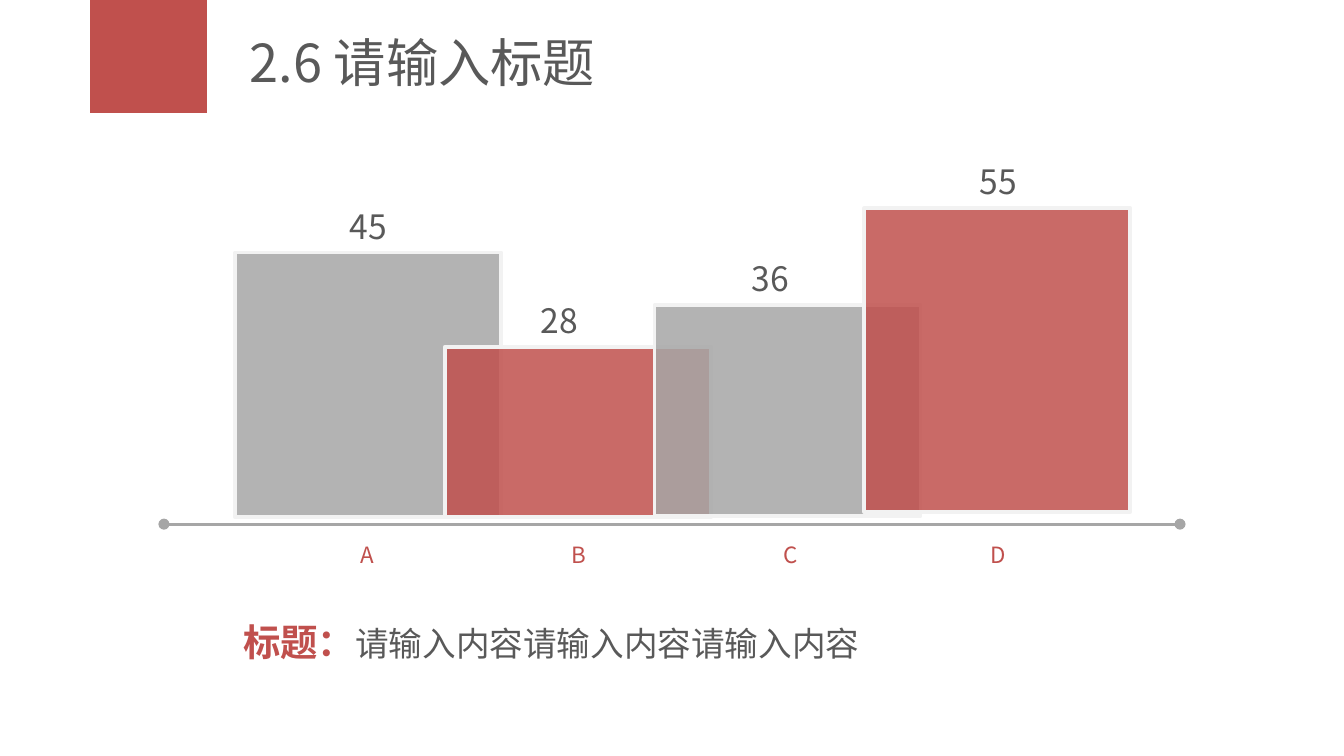
"""Build a slide with four overlapping bars on a baseline."""
from lxml.etree import SubElement
from pptx import Presentation
from pptx.dml.color import RGBColor
from pptx.enum.shapes import MSO_CONNECTOR, MSO_SHAPE
from pptx.enum.text import MSO_ANCHOR, PP_ALIGN
from pptx.oxml.ns import qn
from pptx.util import Inches, Pt

FONT = "Noto Sans CJK SC"
HUES = {"red": "C0504D", "gray": "A6A6A6", "edge": "F2F2F2", "text": "595959"}

deck = Presentation()
deck.slide_width, deck.slide_height = Inches(10), Inches(10 * 9 / 16)
slide = deck.slides.add_slide(deck.slide_layouts[6])


def add_text(box, runs, align=PP_ALIGN.LEFT, space=1.0, wrap=True):
    frame = slide.shapes.add_textbox(*map(Inches, box)).text_frame
    frame.word_wrap = wrap
    line = frame.paragraphs[0]
    line.alignment, line.line_spacing = align, space
    for words, size, hue, bold in runs:
        run = line.add_run()
        run.text = words
        run.font.size, run.font.bold = Pt(size), bold
        run.font.name = FONT
        run.font.color.rgb = RGBColor.from_string(HUES[hue])
        SubElement(run.font._element, qn("a:ea")).set("typeface", FONT)
    return frame


def add_block(box, hue):
    block = slide.shapes.add_shape(MSO_SHAPE.RECTANGLE, *map(Inches, box))
    block.shadow.inherit = False
    block.fill.solid()
    block.fill.fore_color.rgb = RGBColor.from_string(HUES[hue])
    block.line.fill.background()
    return block


add_block((0.67, 0, 0.87, 0.84), "red")
title = add_text((1.76, 0.14, 7.89, 0.63), [("2.6 请输入标题", 28, "text", False)])
title.vertical_anchor = MSO_ANCHOR.MIDDLE

axis = slide.shapes.add_connector(
    MSO_CONNECTOR.STRAIGHT, Inches(1.22), Inches(3.9), Inches(8.78), Inches(3.9))
axis.line.color.rgb = RGBColor.from_string(HUES["gray"])
axis.line.width = Pt(1.5)
for end in ("a:headEnd", "a:tailEnd"):
    SubElement(axis.line._get_or_add_ln(), qn(end)).set("type", "oval")
SubElement(axis._element.spPr, qn("a:effectLst"))

bars = [
    ("A", "45", "gray", 1.88, 1.97, 2.2, 2.57),
    ("B", "28", "red", 2.58, 1.27, 3.62, 4.15),
    ("C", "36", "gray", 2.27, 1.57, 5.19, 5.72),
    ("D", "55", "red", 1.55, 2.26, 6.89, 7.27),
]
for i, (name, value, hue, top, height, left, mark) in enumerate(bars):
    bar = add_block((1.75 + 1.56 * i, top, 1.98, height), hue)
    tint = bar.fill._xPr.find(qn("a:solidFill"))[0]
    SubElement(tint, qn("a:alpha")).set("val", "85000")
    bar.line.color.rgb = RGBColor.from_string(HUES["edge"])
    bar.line.width = Pt(2)
    add_text((left, top - 0.4, 1.08, 0.4), [(value, 18, "text", False)],
             PP_ALIGN.CENTER)
    add_text((mark, 3.88, 0.32, 0.37), [(name, 12, "red", False)],
             PP_ALIGN.CENTER, 1.5, False)

add_text((1.71, 4.39, 6.85, 0.55), [
    ("标题：", 20, "red", True),
    ("请输入内容请输入内容请输入内容", 18, "text", False)], space=1.5)

deck.save("out.pptx")
